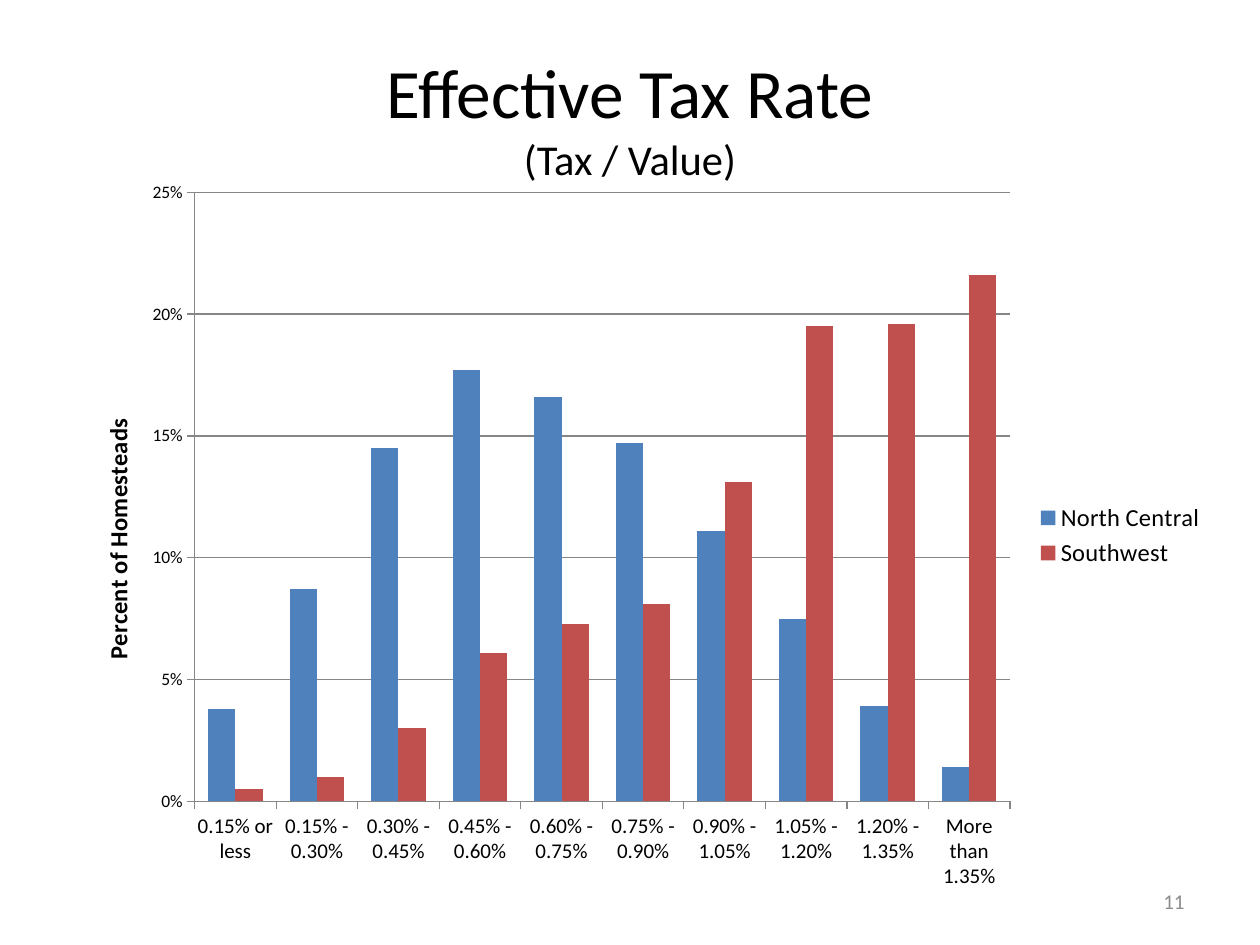
from typing import NamedTuple

from lxml import etree
from pptx import Presentation
from pptx.chart.data import CategoryChartData
from pptx.dml.color import RGBColor
from pptx.enum.chart import XL_CHART_TYPE, XL_LEGEND_POSITION, XL_TICK_MARK
from pptx.enum.text import MSO_ANCHOR, MSO_AUTO_SIZE, PP_ALIGN
from pptx.oxml.ns import qn
from pptx.util import Emu, Pt

PX = 914400 // 126
FONT = "Calibri"
BLACK, GREY, AXIS_GREY = "000000", "8C8C8C", "868686"
COLUMNS = XL_CHART_TYPE.COLUMN_CLUSTERED
RIGHT_LEGEND = XL_LEGEND_POSITION.RIGHT
OUTSIDE = XL_TICK_MARK.OUTSIDE
MIDDLE = MSO_ANCHOR.MIDDLE
NO_FIT = MSO_AUTO_SIZE.NONE
CENTER, RIGHT = PP_ALIGN.CENTER, PP_ALIGN.RIGHT


class Box(NamedTuple):
    left: int
    top: int
    width: int
    height: int

    def emu(self) -> list[Emu]:
        return [Emu(v * PX) for v in self]


class Region(NamedTuple):
    name: str
    color: str
    shares: list[float]


TITLE = Box(63, 38, 1134, 157)
CHART = Box(63, 168, 1155, 735)
PLOT = Box(195, 192, 815, 609)
AXIS_TITLE = Box(97, 414, 0, 0)
NUMBER = Box(903, 876, 294, 50)

RATES = ["0.15% or less", "0.15% - 0.30%", "0.30% - 0.45%", "0.45% - 0.60%",
         "0.60% - 0.75%", "0.75% - 0.90%", "0.90% - 1.05%", "1.05% - 1.20%",
         "1.20% - 1.35%", "More than 1.35%"]
REGIONS = [
    Region("North Central", "4F81BD",
           [0.038, 0.087, 0.145, 0.177, 0.166, 0.147, 0.111, 0.075, 0.039, 0.014]),
    Region("Southwest", "C0504D",
           [0.005, 0.01, 0.03, 0.061, 0.073, 0.081, 0.131, 0.195, 0.196, 0.216]),
]


def rgb(color: str) -> RGBColor:
    return RGBColor.from_string(color)


def style_font(font, size: float, color: str = BLACK, bold: bool = False) -> None:
    font.name, font.size, font.bold = FONT, Pt(size), bold
    font.color.rgb = rgb(color)


def style_line(line) -> None:
    line.color.rgb = rgb(AXIS_GREY)
    line.width = Pt(0.75)


def place(parent, box: Box, inner: bool = False) -> None:
    """Fix a chart part's position, as fractions of the chart's own box."""
    layout = parent.find(qn("c:layout"))
    if layout is None:
        layout = etree.Element(qn("c:layout"))
        if inner:
            parent.insert(0, layout)
        else:
            parent.find(qn("c:tx")).addnext(layout)
    for child in list(layout):
        layout.remove(child)
    values = {"xMode": "edge", "yMode": "edge",
              "x": round((box.left - CHART.left) / CHART.width, 3),
              "y": round((box.top - CHART.top) / CHART.height, 3)}
    if inner:
        values = {"layoutTarget": "inner", **values,
                  "w": round(box.width / CHART.width, 3),
                  "h": round(box.height / CHART.height, 3)}
    manual = etree.SubElement(layout, qn("c:manualLayout"))
    for tag, value in values.items():
        etree.SubElement(manual, qn(f"c:{tag}")).set("val", str(value))


def add_title(s) -> None:
    title = s.shapes.title
    title.left, title.top, title.width, title.height = TITLE.emu()
    tf = title.text_frame
    tf.text = "Effective Tax Rate\v(Tax / Value)"
    tf.auto_size, tf.vertical_anchor = NO_FIT, MIDDLE
    p = tf.paragraphs[0]
    p.alignment = CENTER
    for r, size in zip(p.runs, (39.6, 24.3)):
        style_font(r.font, size)


def add_rate_chart(s) -> None:
    data = CategoryChartData(number_format="0%")
    data.categories = RATES
    for region in REGIONS:
        data.add_series(region.name, region.shares)
    chart = s.shapes.add_chart(COLUMNS, *CHART.emu(), data).chart
    chart.has_title = False
    style_font(chart.font, 10)

    plot = chart.plots[0]
    plot.gap_width, plot.overlap, plot.vary_by_categories = 100, 0, False
    for series, region in zip(plot.series, REGIONS):
        series.format.fill.solid()
        series.format.fill.fore_color.rgb = rgb(region.color)
        series.invert_if_negative = False

    for axis, size in ((chart.category_axis, 12), (chart.value_axis, 10)):
        axis.major_tick_mark = OUTSIDE
        style_font(axis.tick_labels.font, size)
        style_line(axis.format.line)

    shares = chart.value_axis
    shares.minimum_scale, shares.maximum_scale, shares.major_unit = 0, 0.25, 0.05
    shares.tick_labels.number_format = "0%"
    shares.tick_labels.number_format_is_linked = False
    style_line(shares.major_gridlines.format.line)
    tf = shares.axis_title.text_frame
    tf.text = "Percent of Homesteads"
    style_font(tf.paragraphs[0].runs[0].font, 14, bold=True)

    chart.has_legend = True
    chart.legend.position = RIGHT_LEGEND
    chart.legend.include_in_layout = False
    style_font(chart.legend.font, 14)

    plot_area = chart.element.find(".//" + qn("c:plotArea"))
    place(plot_area, PLOT, inner=True)
    place(plot_area.find(qn("c:valAx")).find(qn("c:title")), AXIS_TITLE)


def add_slide_number(s) -> None:
    tf = s.shapes.add_textbox(*NUMBER.emu()).text_frame
    tf.text = "11"
    tf.word_wrap, tf.vertical_anchor = True, MIDDLE
    p = tf.paragraphs[0]
    p.alignment = RIGHT
    style_font(p.runs[0].font, 12, GREY)


def main() -> None:
    prs = Presentation()
    prs.slide_width, prs.slide_height = Emu(1260 * PX), Emu(945 * PX)
    s = prs.slides.add_slide(prs.slide_layouts[5])
    add_title(s)
    add_rate_chart(s)
    add_slide_number(s)
    prs.save("out.pptx")


if __name__ == "__main__":
    main()
